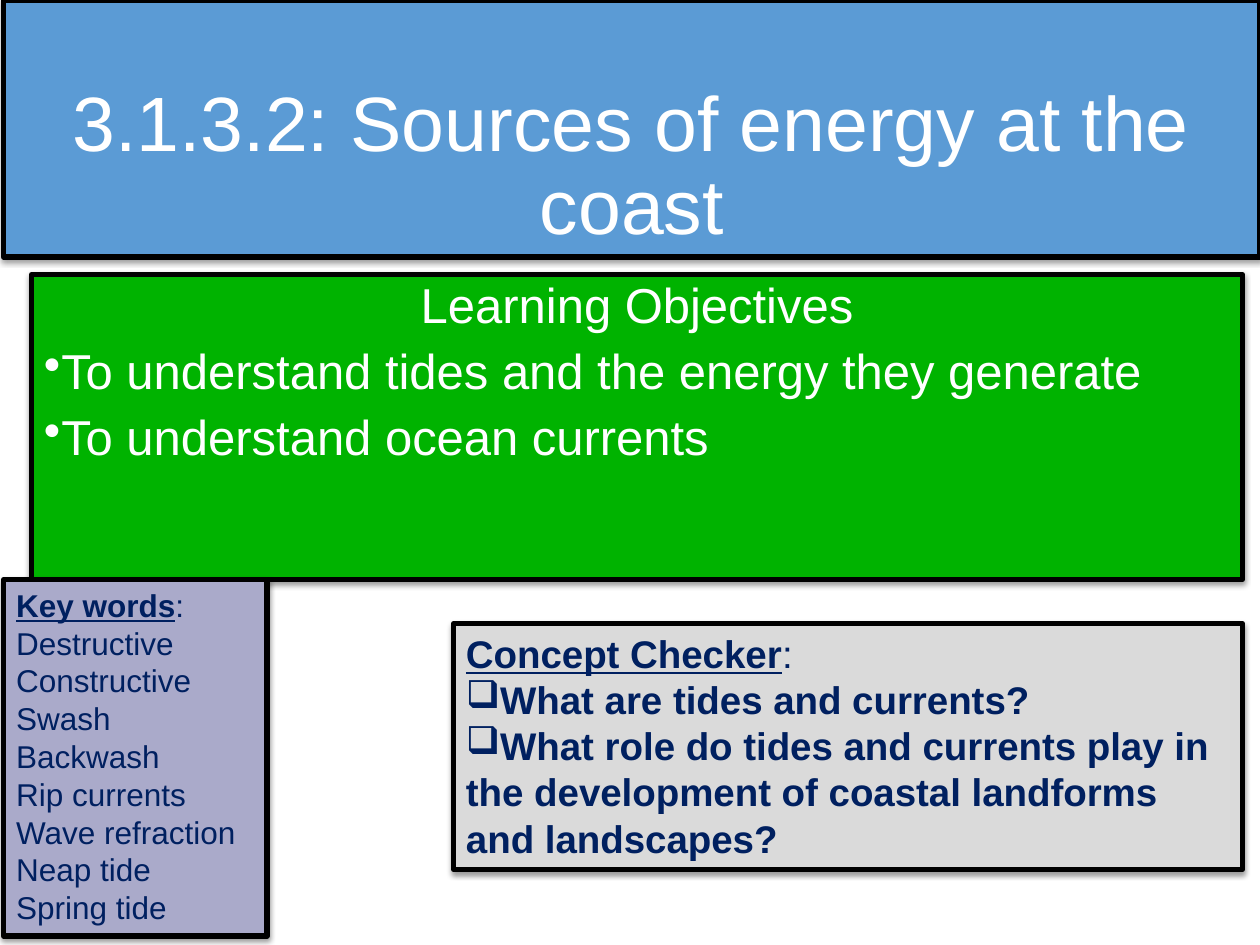
from lxml.etree import SubElement
from pptx import Presentation
from pptx.dml.color import RGBColor
from pptx.enum.shapes import MSO_SHAPE
from pptx.enum.text import MSO_ANCHOR, MSO_AUTO_SIZE, PP_ALIGN
from pptx.oxml.ns import qn
from pptx.util import Inches, Pt

COLORS = {"blue": "5B9BD5", "green": "00B300", "lilac": "AAAACA", "gray": "DADADA",
          "white": "FFFFFF", "navy": "002060", "black": "000000"}
FONT = "Arial"
HEAD = {"bold": True, "underline": True}
TERMS = ["Destructive", "Constructive", "Swash", "Backwash", "Rip currents",
         "Wave refraction", "Neap tide", "Spring tide"]

# A line is (bullet, centred, runs); a run is (text, font values).
TITLE = [("", True, [("3.1.3.2: Sources of energy at the coast", {})])]
GOALS = [
    ("", True, [("Learning Objectives", {})]),
    ("•", False, [("To understand tides and the energy they generate", {})]),
    ("•", False, [("To understand ocean currents", {})]),
]
WORDS = [("", False, [("Key words", HEAD), (":", {})])]
WORDS += [("", False, [(term, {})]) for term in TERMS]
CHECKS = [
    ("", False, [("Concept Checker", HEAD), (":", {})]),
    ("❑", False, [("What are tides and currents?", {"bold": True})]),
    ("❑", False, [("What role do tides and currents play in the development of "
                   "coastal landforms and landscapes?", {"bold": True})]),
]

TOP, BOTTOM = MSO_ANCHOR.TOP, MSO_ANCHOR.BOTTOM
FIXED, GROW = MSO_AUTO_SIZE.NONE, MSO_AUTO_SIZE.SHAPE_TO_FIT_TEXT
PANELS = [
    {"at": (0.03, 0, 9.97, 2.04), "fill": "blue", "ink": "white", "size": 44, "lines": TITLE,
     "space": 0.9, "gap": 0, "frame": {"vertical_anchor": BOTTOM, "auto_size": FIXED}},
    {"at": (0.25, 2.18, 9.61, 2.42), "fill": "green", "ink": "white", "size": 28, "lines": GOALS,
     "space": 0.9, "gap": 7.5, "frame": {"vertical_anchor": TOP, "auto_size": FIXED}},
    {"at": (0.03, 4.6, 2.09, 2.83), "fill": "lilac", "ink": "navy", "size": 18, "lines": WORDS,
     "space": 1.0, "gap": 0, "frame": {"vertical_anchor": TOP, "auto_size": GROW}},
    {"at": (3.6, 4.95, 6.26, 1.95), "fill": "gray", "ink": "navy", "size": 22, "lines": CHECKS,
     "space": 1.0, "gap": 0, "frame": {"vertical_anchor": TOP, "auto_size": GROW}},
]


def color(name):
    return RGBColor.from_string(COLORS[name])


def set_all(item, values):
    for name, value in values.items():
        setattr(item, name, value)


def add_shadow(shape):
    shape.shadow.inherit = False
    effects = shape._element.spPr.find(qn("a:effectLst"))
    shadow = SubElement(effects, qn("a:outerShdw"), blurRad=str(Pt(3.1)), dist=str(Pt(1.6)),
                        dir=str(90 * 60000), rotWithShape="0")
    tint = SubElement(shadow, qn("a:srgbClr"), val=COLORS["black"])
    SubElement(tint, qn("a:alpha"), val="38000")


def add_text(frame, panel):
    for i, (bullet, centred, runs) in enumerate(panel["lines"]):
        para = frame.paragraphs[0] if i == 0 else frame.add_paragraph()
        if bullet:
            SubElement(para._p.get_or_add_pPr(), qn("a:buChar"), char=bullet)
        set_all(para, {
            "alignment": PP_ALIGN.CENTER if centred else PP_ALIGN.LEFT,
            "line_spacing": panel["space"],
            "space_before": Pt(panel["gap"] if i else 0),
        })
        for text, style in runs:
            run = para.add_run()
            run.text = text
            set_all(run.font, {"name": FONT, "size": Pt(panel["size"]), **style})
            run.font.color.rgb = color(panel["ink"])


def add_panel(slide, panel):
    box = slide.shapes.add_shape(MSO_SHAPE.RECTANGLE, *map(Inches, panel["at"]))
    box.fill.solid()
    box.fill.fore_color.rgb = color(panel["fill"])
    box.line.color.rgb = color("black")
    box.line.width = Pt(3)
    add_shadow(box)
    set_all(box.text_frame, {"word_wrap": True, **panel["frame"]})
    add_text(box.text_frame, panel)


def main():
    deck = Presentation()
    set_all(deck, {"slide_width": Inches(10), "slide_height": Inches(7.5)})
    slide = deck.slides.add_slide(deck.slide_layouts[6])
    for panel in PANELS:
        add_panel(slide, panel)
    deck.save("out.pptx")


if __name__ == "__main__":
    main()
